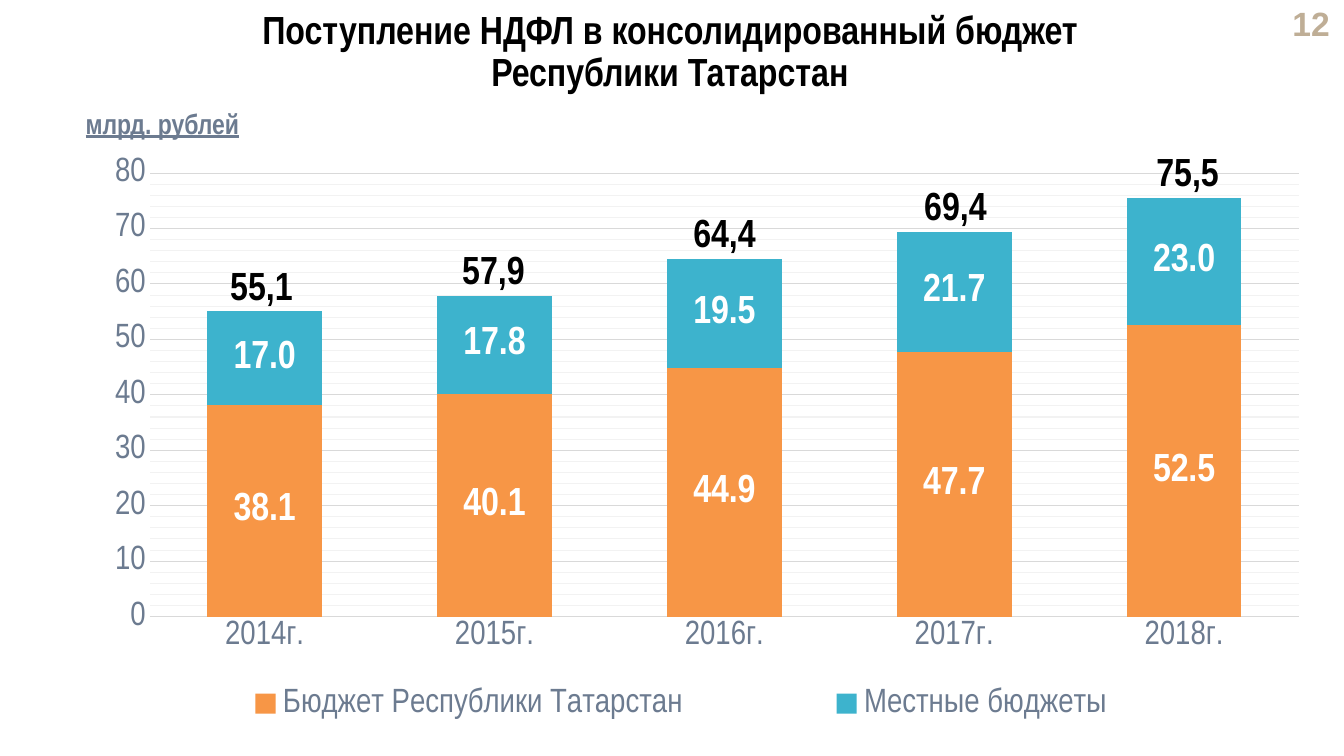
from dataclasses import dataclass

from lxml.etree import SubElement
from pptx import Presentation
from pptx.chart.data import CategoryChartData
from pptx.dml.color import RGBColor
from pptx.enum.chart import (XL_CHART_TYPE, XL_LABEL_POSITION,
                             XL_LEGEND_POSITION, XL_TICK_MARK)
from pptx.enum.text import MSO_ANCHOR, PP_ALIGN
from pptx.oxml.ns import qn
from pptx.util import Emu, Pt

PX = 9525  # EMU in one px, 96 px to the inch
FONT = "Arial Narrow"
COLORS = {
    "black": "000000", "white": "FFFFFF", "slate": "6C7B90", "sand": "BFAE96",
    "orange": "F79646", "teal": "3DB3CD", "grid": "D9D9D9", "faint": "F2F2F2",
}
YEARS = ["2014г.", "2015г.", "2016г.", "2017г.", "2018г."]


@dataclass
class Label:
    lines: list[str]
    box: tuple[int, int, int, int]
    size: int = 28
    color: str = "black"
    font: str = FONT
    align: PP_ALIGN = PP_ALIGN.CENTER
    anchor: MSO_ANCHOR = MSO_ANCHOR.TOP
    under: bool = False
    pitch: float = 1.0


@dataclass
class Budget:
    name: str
    color: str
    values: list[float]


BUDGETS = [
    Budget("Бюджет Республики Татарстан", "orange", [38.1, 40.1, 44.9, 47.7, 52.5]),
    Budget("Местные бюджеты", "teal", [17.0, 17.8, 19.5, 21.7, 23.0]),
]
LABELS = [
    Label(["12"], (1194, 5, 82, 33), 24, "sand", "Arial", PP_ALIGN.RIGHT,
          MSO_ANCHOR.MIDDLE),
    Label(["Поступление НДФЛ в консолидированный бюджет", "Республики Татарстан"],
          (72, 5, 1132, 60), pitch=0.9),
    Label(["млрд. рублей"], (72, 97, 202, 42), 20, "slate",
          align=PP_ALIGN.LEFT, under=True),
]


def px(n: float) -> Emu:
    return Emu(round(n * PX))


def rgb(name: str) -> RGBColor:
    return RGBColor.from_string(COLORS[name])


def style(font, size: int, color: str, bold: bool = False, name: str = FONT) -> None:
    font.name, font.size, font.bold = name, Pt(size), bold
    font.color.rgb = rgb(color)


def draw_label(slide, label: Label) -> None:
    frame = slide.shapes.add_textbox(*map(px, label.box)).text_frame
    frame.word_wrap = True
    frame.vertical_anchor = label.anchor
    para = frame.paragraphs[0]
    para.alignment = label.align
    para.line_spacing = label.pitch
    for i, line in enumerate(label.lines):
        if i:
            para.add_line_break()
        run = para.add_run()
        run.text = line
        style(run.font, label.size, label.color, True, label.font)
        run.font.underline = label.under


def set_layout(parent, rect: dict[str, float], inner: bool = False) -> None:
    """Place a chart part by fractions of the chart's size."""
    layout = parent.find(qn("c:layout"))
    if layout is None:
        layout = SubElement(parent, qn("c:layout"))
        parent.remove(layout)
        first = parent.find(qn("c:legendPos"))
        parent.insert(0 if first is None else parent.index(first) + 1, layout)
    for old in list(layout):
        layout.remove(old)
    manual = SubElement(layout, qn("c:manualLayout"))
    if inner:
        SubElement(manual, qn("c:layoutTarget")).set("val", "inner")
    for key in ("xMode", "yMode"):
        SubElement(manual, qn("c:" + key)).set("val", "edge")
    for key, part in rect.items():
        SubElement(manual, qn("c:" + key)).set("val", str(part))


def set_line(line, color: str) -> None:
    line.color.rgb = rgb(color)
    line.width = Pt(0.75)


def set_minor(space, color: str) -> None:
    """Colour the minor grid lines."""
    node = space.find(".//" + qn("c:minorGridlines"))
    line = SubElement(SubElement(node, qn("c:spPr")), qn("a:ln"))
    line.set("w", str(Pt(0.75)))
    fill = SubElement(line, qn("a:solidFill"))
    SubElement(fill, qn("a:srgbClr")).set("val", COLORS[color])


def draw_chart(slide) -> None:
    data = CategoryChartData(number_format="0.0")
    data.categories = YEARS
    for budget in BUDGETS:
        data.add_series(budget.name, budget.values)
    chart = slide.shapes.add_chart(
        XL_CHART_TYPE.COLUMN_STACKED, *map(px, (72, 142, 1177, 571)), data).chart
    space = chart.element if hasattr(chart, "element") else chart._chartSpace
    style(chart.font, 10, "black", name="Calibri")
    chart.has_title = False

    # Columns and their values
    plot = chart.plots[0]
    plot.gap_width, plot.overlap = 100, 100
    plot.vary_by_categories = False
    for series, budget in zip(plot.series, BUDGETS):
        series.format.fill.solid()
        series.format.fill.fore_color.rgb = rgb(budget.color)
        tags = series.data_labels
        tags.show_value = True
        tags.position = XL_LABEL_POSITION.CENTER
        tags.number_format, tags.number_format_is_linked = "0.0", False
        style(tags.font, 28, "white", True)

    # Axes and grid
    years, scale = chart.category_axis, chart.value_axis
    for axis in (years, scale):
        axis.major_tick_mark = axis.minor_tick_mark = XL_TICK_MARK.NONE
        style(axis.tick_labels.font, 24, "slate")
    set_line(years.format.line, "grid")
    scale.format.line.fill.background()
    scale.minimum_scale, scale.maximum_scale = 0, 80
    scale.major_unit, scale.minor_unit = 10, 2
    scale.tick_labels.number_format = "0"
    scale.tick_labels.number_format_is_linked = False
    scale.has_major_gridlines = scale.has_minor_gridlines = True
    set_line(scale.major_gridlines.format.line, "grid")
    set_minor(space, "faint")

    # Legend and plot area
    chart.has_legend = True
    legend = chart.legend
    legend.position = XL_LEGEND_POSITION.BOTTOM
    legend.include_in_layout = False
    style(legend.font, 24, "slate")
    set_layout(space.find(".//" + qn("c:legend")),
               {"x": 0.03, "y": 0.88, "w": 0.92, "h": 0.09})
    set_layout(space.find(".//" + qn("c:plotArea")),
               {"x": 0.06, "y": 0.04, "w": 0.93, "h": 0.74}, inner=True)


def draw_totals(slide) -> None:
    """Put each year's sum just above its column."""
    wide, base, unit, lift = 108, 588, 5.29, 53
    for i, parts in enumerate(zip(*(budget.values for budget in BUDGETS))):
        total = sum(parts)
        left = round(249 + 220.5 * i - wide / 2)
        top = round(base - unit * total - lift)
        text = f"{total:.1f}".replace(".", ",")
        draw_label(slide, Label([text], (left, top, wide, 55)))


def main() -> None:
    deck = Presentation()
    deck.slide_width, deck.slide_height = px(1280), px(720)
    slide = deck.slides.add_slide(deck.slide_layouts[6])
    draw_chart(slide)
    for label in LABELS:
        draw_label(slide, label)
    draw_totals(slide)
    deck.save("out.pptx")


if __name__ == "__main__":
    main()
